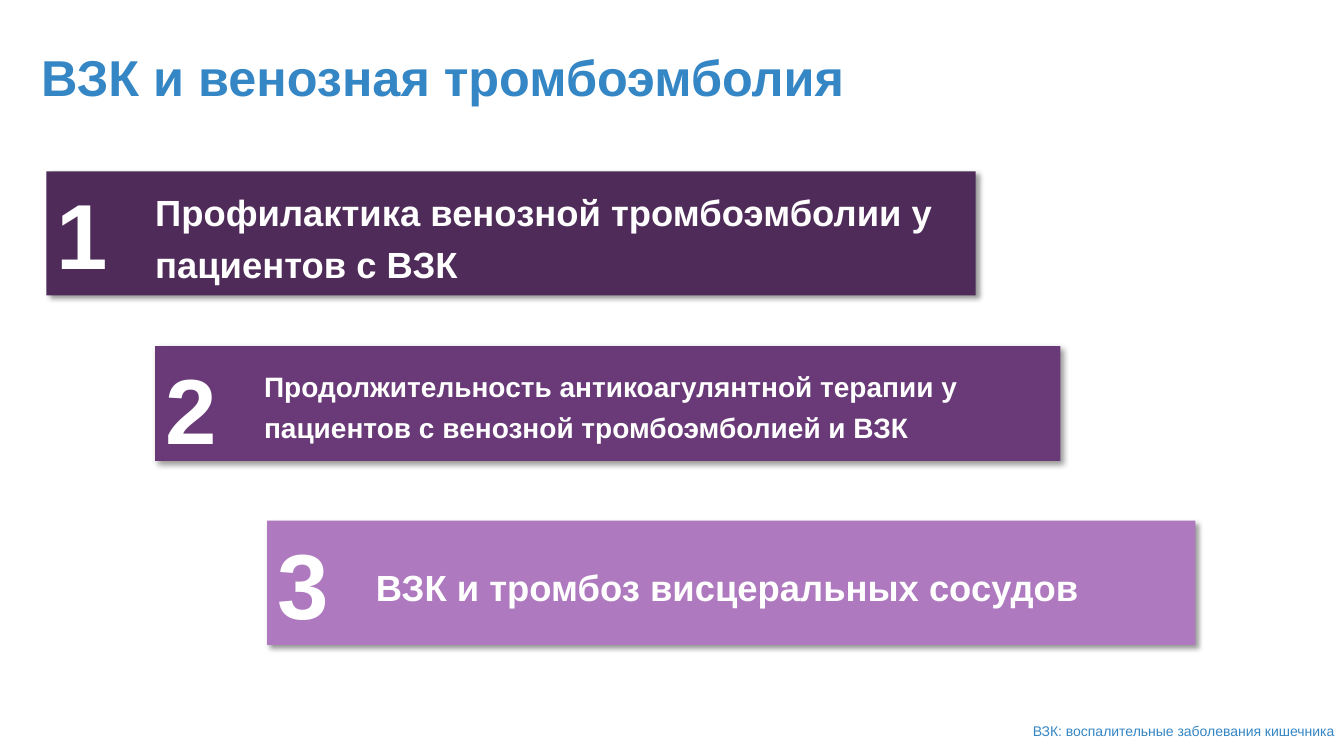
from lxml.etree import SubElement
from pptx import Presentation
from pptx.dml.color import RGBColor
from pptx.enum.shapes import MSO_SHAPE
from pptx.enum.text import MSO_ANCHOR, MSO_AUTO_SIZE, PP_ALIGN
from pptx.oxml.ns import qn
from pptx.util import Pt

COLORS = {
    "blue": "3486C5",
    "white": "FFFFFF",
    "dark": "4F2B59",
    "medium": "693A77",
    "light": "AE79BE",
    "shadow": "000000",
}


class Deck:
    font = "Arial"

    def __init__(self, prs):
        self.slide = prs.slides.add_slide(prs.slide_layouts[6])

    def add_text(self, sp, text, size, color, bold=True, align=PP_ALIGN.LEFT):
        p = sp.text_frame.paragraphs[0]
        p.alignment = align
        r = p.add_run()
        r.text = text
        r.font.name = self.font
        r.font.size = Pt(size)
        r.font.bold = bold
        r.font.color.rgb = RGBColor.from_string(COLORS[color])
        return p

    def label(self, box, text, size, color, **style):
        sp = self.slide.shapes.add_textbox(*map(Pt, box))
        tf = sp.text_frame
        tf.word_wrap = True
        tf.vertical_anchor = MSO_ANCHOR.MIDDLE
        return self.add_text(sp, text, size, color, **style)

    def shadow(self, sp):
        effects = SubElement(sp._element.spPr, qn("a:effectLst"))
        outer = SubElement(effects, qn("a:outerShdw"), blurRad=str(Pt(4)),
                           dist=str(Pt(3)), dir="2700000", algn="tl", rotWithShape="0")
        color = SubElement(outer, qn("a:srgbClr"), val=COLORS["shadow"])
        SubElement(color, qn("a:alpha"), val="40000")

    def bar(self, shapes, box, fill, text, size):
        sp = shapes.add_shape(MSO_SHAPE.RECTANGLE, *map(Pt, box))
        sp.fill.solid()
        sp.fill.fore_color.rgb = RGBColor.from_string(COLORS[fill])
        sp.line.fill.background()
        self.shadow(sp)
        tf = sp.text_frame
        tf.word_wrap = True
        tf.vertical_anchor = MSO_ANCHOR.MIDDLE
        tf.margin_left = tf.margin_right = Pt(7.2)
        tf.margin_top = tf.margin_bottom = Pt(5.8)
        p = self.add_text(sp, text, size, "white")
        p.line_spacing = 1.2
        p._p.get_or_add_pPr().set("marL", str(Pt(70.6)))

    def number(self, shapes, left, top, text):
        sp = shapes.add_textbox(Pt(left), Pt(top), Pt(51.8), Pt(87.1))
        sp.text_frame.word_wrap = False
        sp.text_frame.auto_size = MSO_AUTO_SIZE.SHAPE_TO_FIT_TEXT
        self.add_text(sp, text, 66, "white")

    def topic(self, number, box, fill, text, size):
        shapes = self.slide.shapes.add_group_shape().shapes
        self.bar(shapes, box, fill, text, size)
        self.number(shapes, box[0] + 0.5, box[1] + 0.9, str(number))


def main():
    prs = Presentation()
    prs.slide_width, prs.slide_height = Pt(960), Pt(540)
    deck = Deck(prs)

    title = deck.label((22.3, 16.6, 822.2, 82.1), "ВЗК и венозная тромбоэмболия", 36, "blue")
    title.line_spacing = 0.9

    topics = [
        (33.1, 663.8, 88.6, "dark", 26,
         "Профилактика венозной тромбоэмболии у пациентов с ВЗК"),
        (110.9, 646.6, 82.1, "medium", 20,
         "Продолжительность антикоагулянтной терапии у пациентов "
         "с венозной тромбоэмболией и ВЗК"),
        (190.8, 663.1, 88.6, "light", 26,
         "ВЗК и тромбоз висцеральных сосудов"),
    ]
    for i, (left, width, height, fill, size, text) in enumerate(topics):
        deck.topic(i + 1, (left, 122.4 + 124.8 * i, width, height), fill, text, size)

    deck.label((424.8, 504.7, 535.2, 35.3), "ВЗК: воспалительные заболевания кишечника",
               10, "blue", bold=False, align=PP_ALIGN.RIGHT)

    prs.save("out.pptx")


if __name__ == "__main__":
    main()
